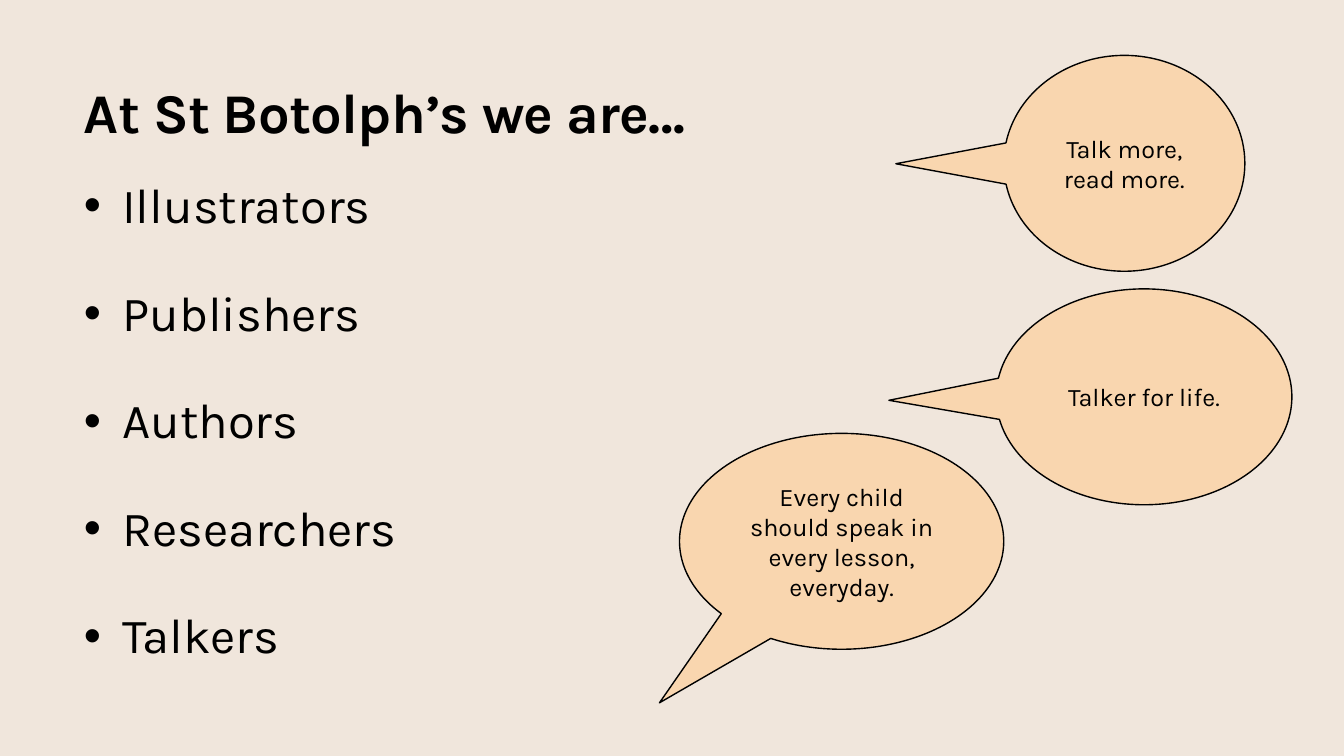
import pptx
import pptx.dml.color
import pptx.enum.shapes
import pptx.enum.text
import pptx.oxml.ns
import pptx.util
from lxml import etree

INK = pptx.dml.color.RGBColor(0x00, 0x00, 0x00)
SAND = pptx.dml.color.RGBColor(0xF0, 0xE6, 0xDC)
PEACH = pptx.dml.color.RGBColor(0xF9, 0xD6, 0xAF)

ROLES = ["Illustrators", "Publishers", "Authors", "Researchers", "Talkers"]
BUBBLE_HEIGHT = 2.57
BUBBLES = [
    ("Talk more, read more.", 11.95, 0.66, 2.87, (-0.948, 0.002)),
    ("Talker for life.", 11.86, 3.44, 3.52, (-0.863, 0.016)),
    ("Every child should speak in every lesson, everyday.", 8.09, 5.16, 3.86, (-0.562, 0.748)),
]


def assign(target, values):
    for name, value in values.items():
        setattr(target, name, value)


class SlideBuilder:
    columns, rows = 16, 9
    font = "Karla"
    flush = dict(margin_left=0, margin_top=0, margin_right=0, margin_bottom=0, word_wrap=True)

    def __init__(self, deck):
        self.column = deck.slide_width / self.columns
        self.row = deck.slide_height / self.rows
        self.page = deck.slides.add_slide(deck.slide_layouts[5])
        background = self.page.background.fill
        background.solid()
        background.fore_color.rgb = SAND

    def place(self, left, top, width, height):
        return (round(left * self.column), round(top * self.row),
                round(width * self.column), round(height * self.row))

    def add_text(self, para, text, size, bold=False):
        span = para.add_run()
        span.text = text
        assign(span.font, dict(name=self.font, size=pptx.util.Pt(size), bold=bold))
        span.font.color.rgb = INK
        return span

    def title(self, text, *area):
        box = self.page.shapes.title
        assign(box, dict(zip(("left", "top", "width", "height"), self.place(*area))))
        assign(box.text_frame, dict(
            self.flush,
            vertical_anchor=pptx.enum.text.MSO_ANCHOR.BOTTOM,
            auto_size=pptx.enum.text.MSO_AUTO_SIZE.NONE))
        para = box.text_frame.paragraphs[0]
        para.alignment = pptx.enum.text.PP_ALIGN.LEFT
        span = self.add_text(para, text, 40, bold=True)
        span.font._element.set("spc", "-50")

    def bullets(self, items, *area):
        frame = self.page.shapes.add_textbox(*self.place(*area)).text_frame
        assign(frame, self.flush)
        indent = pptx.util.Inches(0.38)
        for index, item in enumerate(items):
            para = frame.add_paragraph() if index else frame.paragraphs[0]
            properties = para._p.get_or_add_pPr()
            properties.set("marL", str(indent))
            properties.set("indent", str(-indent))
            for tag, key, value in (("a:buFont", "typeface", "Arial"), ("a:buChar", "char", "•")):
                etree.SubElement(properties, pptx.oxml.ns.qn(tag)).set(key, value)
            para.line_spacing = 0.9
            if index:
                para.space_before = pptx.util.Pt(39)
            self.add_text(para, item, 35)

    def bubble(self, text, tail, *area):
        shape = self.page.shapes.add_shape(
            pptx.enum.shapes.MSO_SHAPE.OVAL_CALLOUT, *self.place(*area))
        for index, offset in enumerate(tail):
            shape.adjustments[index] = offset
        shape.shadow.inherit = False
        shape.fill.solid()
        shape.fill.fore_color.rgb = PEACH
        shape.line.color.rgb = INK
        shape.line.width = pptx.util.Pt(1)
        assign(shape.text_frame, dict(
            word_wrap=True, vertical_anchor=pptx.enum.text.MSO_ANCHOR.MIDDLE))
        para = shape.text_frame.paragraphs[0]
        para.alignment = pptx.enum.text.PP_ALIGN.CENTER
        self.add_text(para, text, 18)


def main():
    deck = pptx.Presentation()
    deck.slide_width = pptx.util.Inches(13.33)
    deck.slide_height = pptx.util.Inches(7.5)
    builder = SlideBuilder(deck)
    builder.bullets(ROLES, 1, 2.16, 14, 5.7)
    builder.title("At St Botolph’s we are…", 1, 0.92, 10.55, 0.8)
    for text, left, top, width, tail in BUBBLES:
        builder.bubble(text, tail, left, top, width, BUBBLE_HEIGHT)
    deck.save("out.pptx")


if __name__ == "__main__":
    main()
